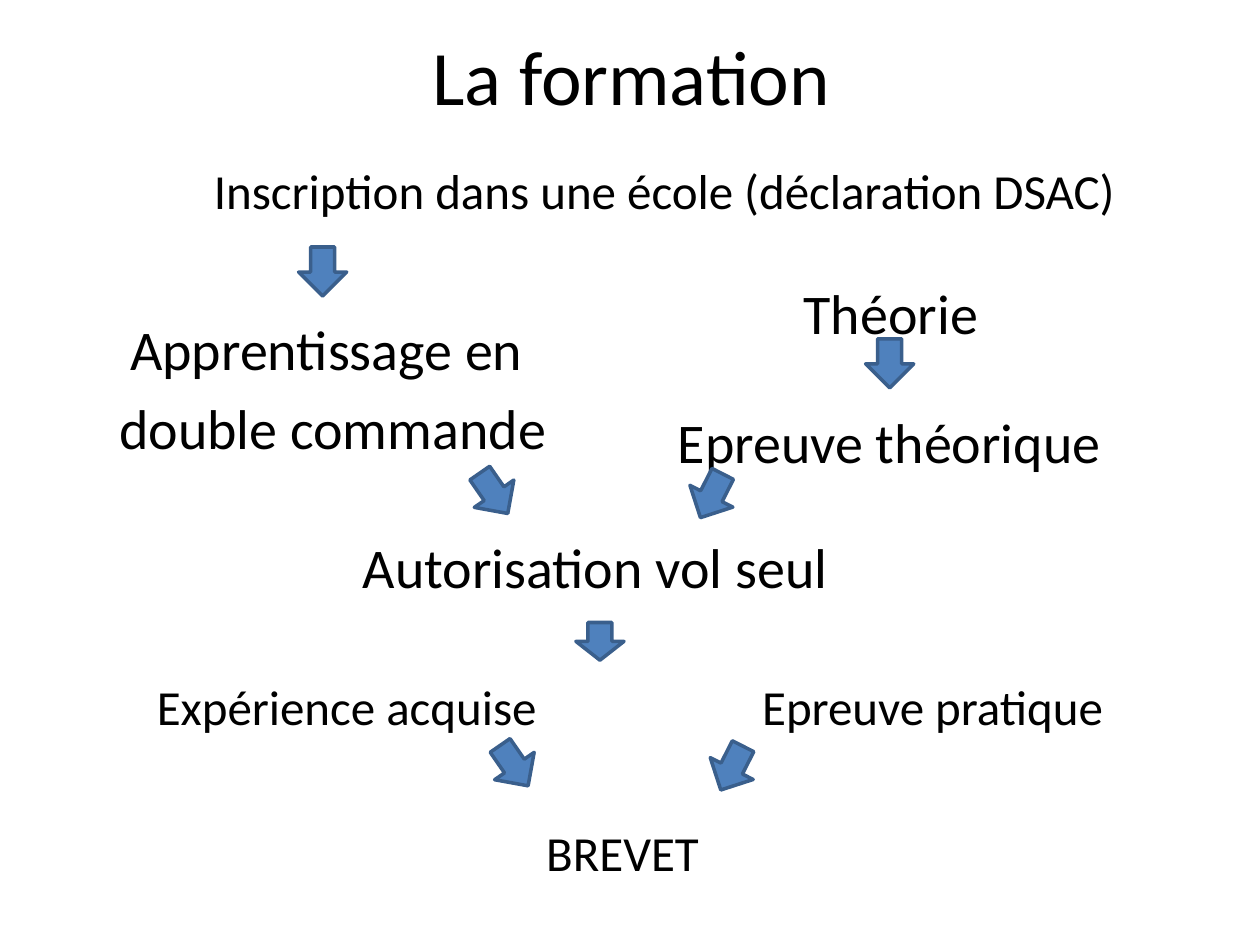
from pptx import Presentation
from pptx.dml.color import RGBColor
from pptx.enum.shapes import MSO_SHAPE
from pptx.enum.text import MSO_ANCHOR, PP_ALIGN
from pptx.util import Cm, Pt

BLACK = RGBColor(0x00, 0x00, 0x00)
BLUE = RGBColor(0x4F, 0x81, 0xBD)
DARK_BLUE = RGBColor(0x3A, 0x5F, 0x8C)


def write(frame, text, size=28, font="Calibri", color=BLACK,
          align=PP_ALIGN.CENTER, anchor=MSO_ANCHOR.TOP, spacing=0.2):
    frame.word_wrap = True
    frame.vertical_anchor = anchor
    for index, line in enumerate(text.split("\n")):
        paragraph = frame.paragraphs[0] if index == 0 else frame.add_paragraph()
        paragraph.alignment = align
        paragraph.space_before = Pt(size * spacing)
        run = paragraph.add_run()
        run.text = line
        run.font.size = Pt(size)
        run.font.name = font
        run.font.color.rgb = color


class TrainingSlide:
    step_width = 9.4
    arrow_width = 0.97
    arrow_height = 0.99
    line_width = 2

    def __init__(self, presentation):
        self.slide = presentation.slides.add_slide(presentation.slide_layouts[5])

    def title(self, text, left, top, width, height):
        heading = self.slide.shapes.title
        heading.left, heading.top = Cm(left), Cm(top)
        heading.width, heading.height = Cm(width), Cm(height)
        write(heading.text_frame, text, size=44, anchor=MSO_ANCHOR.MIDDLE, spacing=0)

    def step(self, text, left, top, width=step_width, height=1.12, size=28):
        box = self.slide.shapes.add_textbox(Cm(left), Cm(top), Cm(width), Cm(height))
        write(box.text_frame, text, size=size)

    def arrow(self, left, top, height=arrow_height, rotation=0):
        arrow = self.slide.shapes.add_shape(
            MSO_SHAPE.DOWN_ARROW, Cm(left), Cm(top), Cm(self.arrow_width), Cm(height))
        arrow.rotation = rotation
        arrow.shadow.inherit = False
        arrow.fill.solid()
        arrow.fill.fore_color.rgb = BLUE
        arrow.line.color.rgb = DARK_BLUE
        arrow.line.width = Pt(self.line_width)

    def converging_arrows(self, left, top):
        self.arrow(left, top, rotation=325.3)
        self.arrow(left + 4.39, top + 0.05, rotation=27)


def main():
    presentation = Presentation()
    presentation.slide_width, presentation.slide_height = Cm(25.4), Cm(19.05)
    formation = TrainingSlide(presentation)

    formation.title("La formation", 1.3, -0.08, 22.86, 3.18)
    formation.step("Inscription dans une école (déclaration DSAC)",
                   1.96, 3.12, width=22.86, height=1.8)
    formation.step("Apprentissage en \ndouble commande", 2.01, 6.22, height=3, size=32)
    formation.step("Théorie", 13.26, 5.49, height=1.52, size=32)
    formation.step("Epreuve théorique", 13.23, 8.1, size=32)
    formation.step("Autorisation vol seul", 6.1, 10.62, width=11.81, height=1.5, size=32)
    formation.step("Epreuve pratique", 14.1, 13.51)
    formation.step("Expérience acquise", 2.29, 13.51)
    formation.step("BREVET", 7.85, 16.46)

    formation.arrow(6.02, 4.98)
    formation.arrow(17.45, 6.83)
    formation.arrow(11.61, 12.55, height=0.76)
    formation.converging_arrows(9.47, 9.45)
    formation.converging_arrows(9.88, 14.94)

    presentation.save("out.pptx")


if __name__ == "__main__":
    main()
